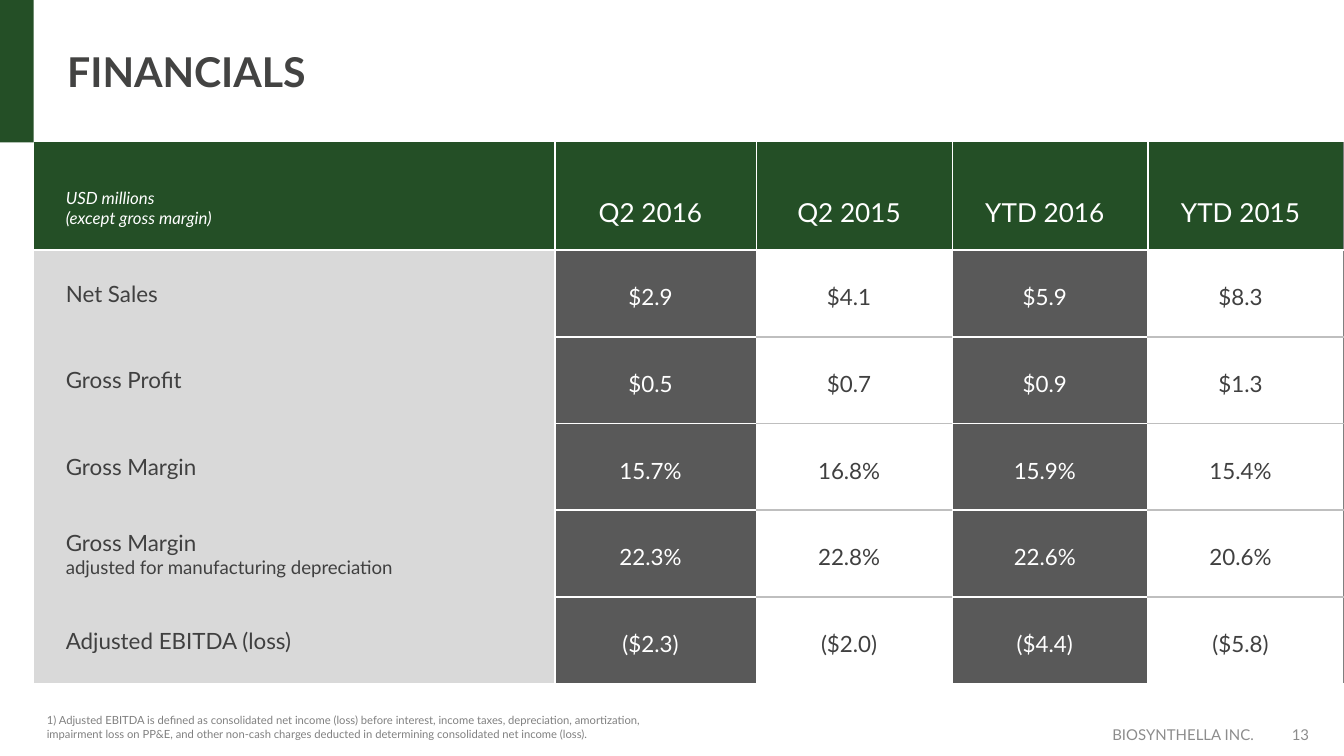
import pptx
import pptx.dml.color
import pptx.enum.shapes
import pptx.enum.text
import pptx.oxml
import pptx.oxml.ns
import pptx.util
from pptx.util import Inches

LEFT = pptx.enum.text.PP_ALIGN.LEFT
CENTER = pptx.enum.text.PP_ALIGN.CENTER
RIGHT = pptx.enum.text.PP_ALIGN.RIGHT
MIDDLE = pptx.enum.text.MSO_ANCHOR.MIDDLE
BOTTOM = pptx.enum.text.MSO_ANCHOR.BOTTOM
GREEN, WHITE, DARK, PALE = "244F26", "FFFFFF", "595959", "D9D9D9"
TEXT, RULE, EDGE, FOOTER = "404040", "BFBFBF", "808080", "8C8C8C"


def color(value):
    return pptx.dml.color.RGBColor.from_string(value)


def write(text_frame, text, size=12, fill=TEXT, align=LEFT, bold=False, italic=False, second_size=None):
    text_frame.word_wrap = True
    paragraph = text_frame.paragraphs[0]
    paragraph.alignment = align
    for index, line in enumerate(text.split("\n")):
        if index:
            paragraph.add_line_break()
        run = paragraph.add_run()
        run.text = line
        run.font.name = "Lato"
        run.font.size = pptx.util.Pt(second_size if index and second_size else size)
        run.font.bold = bold
        run.font.italic = italic
        run.font.color.rgb = color(fill)


presentation = pptx.Presentation()
presentation.slide_width = Inches(10)
presentation.slide_height = Inches(10) * 9 // 16
slide = presentation.slides.add_slide(presentation.slide_layouts[5])

title = slide.shapes.title
title.left, title.top, title.width, title.height = Inches(0.4), Inches(0), Inches(9), Inches(1.06)
title.text_frame.auto_size = pptx.enum.text.MSO_AUTO_SIZE.NONE
title.text_frame.vertical_anchor = MIDDLE
write(title.text_frame, "FINANCIALS", size=22, fill="434342", bold=True)

accent = slide.shapes.add_shape(
    pptx.enum.shapes.MSO_SHAPE.RECTANGLE, Inches(0), Inches(0), Inches(0.25), Inches(1.06))
accent.shadow.inherit = False
accent.fill.solid()
accent.fill.fore_color.rgb = color(GREEN)
accent.line.fill.background()

financials = [
    ["USD millions\n(except gross margin)", "Q2 2016", "Q2 2015", "YTD 2016", "YTD 2015"],
    ["Net Sales", "$2.9", "$4.1", "$5.9", "$8.3"],
    ["Gross Profit", "$0.5", "$0.7", "$0.9", "$1.3"],
    ["Gross Margin", "15.7%", "16.8%", "15.9%", "15.4%"],
    ["Gross Margin\nadjusted for manufacturing depreciation", "22.3%", "22.8%", "22.6%", "20.6%"],
    ["Adjusted EBITDA (loss)", "($2.3)", "($2.0)", "($4.4)", "($5.8)"],
]
last_row = len(financials) - 1
last_column = len(financials[0]) - 1
table = slide.shapes.add_table(
    len(financials), len(financials[0]), Inches(0.25), Inches(1.06), Inches(9.75), Inches(4.03)).table
table.horz_banding = False
style = table._tbl.tblPr.find(pptx.oxml.ns.qn("a:tableStyleId"))
style.text = "{2D5ABB26-0587-4C30-8999-92F81FD0307C}"
for index, column in enumerate(table.columns):
    column.width = Inches([3.88, 1.5][index] if index < 2 else (9.75 - 3.88 - 1.5) / 3)
for index, row in enumerate(table.rows):
    row.height = Inches((4.03 - 0.8) / last_row if index else 0.8)

for row_index, values in enumerate(financials):
    for column_index, value in enumerate(values):
        cell = table.cell(row_index, column_index)
        header = row_index == 0
        label = column_index == 0
        dark = column_index in (1, 3)
        cell.margin_left = Inches(0.24 if label else 0.12)
        cell.margin_right = Inches(0.3 if label else 0.2)
        cell.margin_top = Inches(0.05)
        cell.margin_bottom = Inches(0.16 if header else 0.05 if label else 0)
        cell.vertical_anchor = BOTTOM if header else MIDDLE
        write(cell.text_frame, value,
              size=(9 if label else 14) if header else 12,
              fill=WHITE if header or dark else TEXT,
              align=LEFT if label else CENTER,
              italic=header and label,
              second_size=None if header else 10)

        between = None if label else WHITE if dark else RULE
        borders = {
            "a:lnL": None if label else WHITE,
            "a:lnR": EDGE if column_index == last_column else WHITE,
            "a:lnT": None if header else WHITE if row_index == 1 else between,
            "a:lnB": WHITE if header or row_index == last_row else between,
        }
        properties = cell._tc.get_or_add_tcPr()
        for tag, stroke in borders.items():
            line = pptx.oxml.ns.qn(tag)
            border = properties.makeelement(line, {"w": "6350" if stroke == EDGE else "12700"})
            properties.append(border)
            paint = "a:solidFill" if stroke else "a:noFill"
            fill = border.makeelement(pptx.oxml.ns.qn(paint), {})
            border.append(fill)
            if stroke:
                fill.append(fill.makeelement(pptx.oxml.ns.qn("a:srgbClr"), {"val": stroke}))
        cell.fill.solid()
        cell.fill.fore_color.rgb = color(GREEN if header else PALE if label else DARK if dark else WHITE)

footnote = (
    "1) Adjusted EBITDA is defined as consolidated net income (loss) before interest, income taxes, "
    "depreciation, amortization, \nimpairment loss on PP&E, and other non-cash charges deducted in "
    "determining consolidated net income (loss).")
for text, left, width, height, size, fill, align in [
    ("BIOSYNTHELLA INC.", 6.26, 3.17, 0.31, 8, FOOTER, RIGHT),
    ("13", 9.41, 0.43, 0.31, 8, FOOTER, RIGHT),
    (footnote, 0.25, 10.01, 0.2, 6, EDGE, LEFT),
]:
    box = slide.shapes.add_textbox(Inches(left), Inches(5.31), Inches(width), Inches(height))
    box.text_frame.vertical_anchor = MIDDLE
    write(box.text_frame, text, size=size, fill=fill, align=align)

presentation.save("out.pptx")
